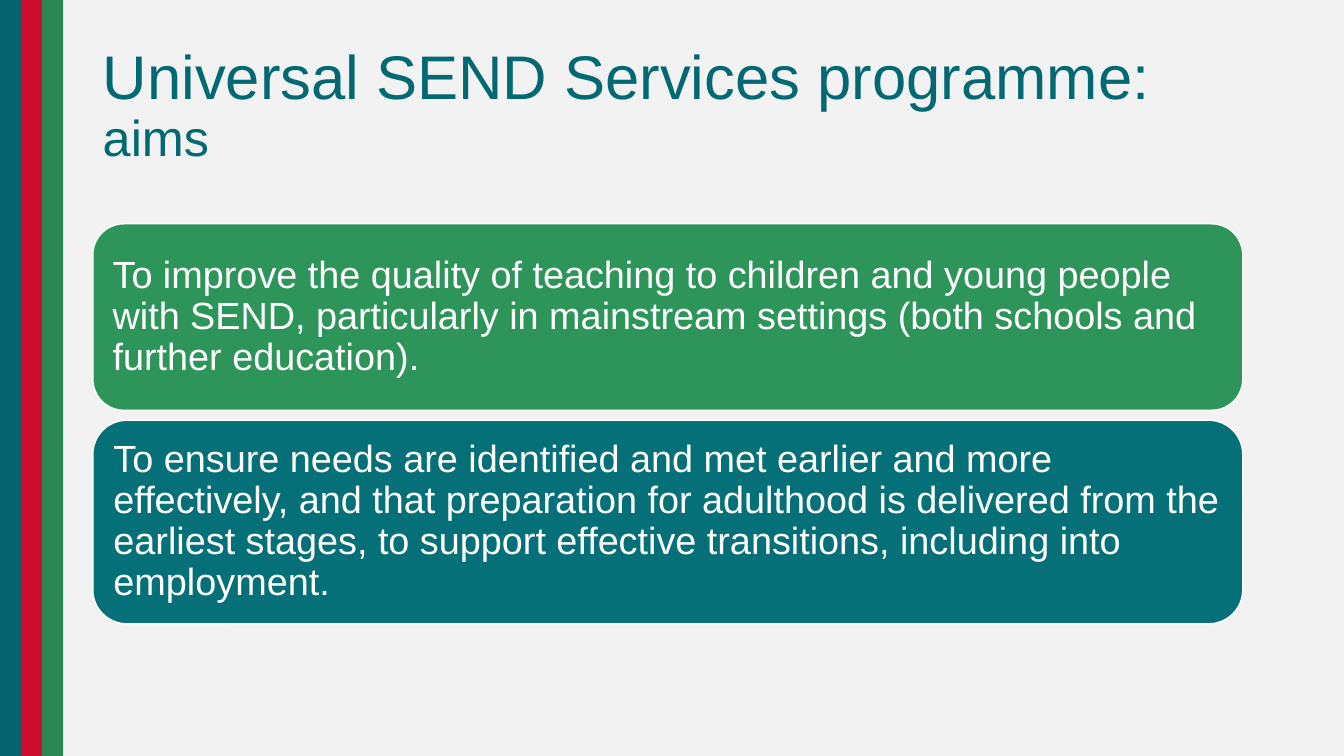
from typing import NamedTuple

from pptx import Presentation
from pptx.dml.color import RGBColor
from pptx.enum.shapes import MSO_SHAPE
from pptx.enum.text import MSO_ANCHOR, PP_ALIGN
from pptx.shapes.autoshape import Shape
from pptx.slide import Slide
from pptx.text.text import TextFrame
from pptx.util import Cm, Pt

SLIDE_WIDTH, SLIDE_HEIGHT = 33.87, 19.05
STRIPE_WIDTH = 0.53
STRIPE_COLORS = ("03646F", "CC0D2D", "2A8852")
CONTENT_LEFT = 2.34


class Aim(NamedTuple):
    top: float
    height: float
    color: str
    text: str


AIMS = (
    Aim(5.64, 4.7, "2E955A",
        "To improve the quality of teaching to children and young people with SEND, "
        "particularly in mainstream settings (both schools and further education)."),
    Aim(10.59, 5.13, "057078",
        "To ensure needs are identified and met earlier and more effectively, and that "
        "preparation for adulthood is delivered from the earliest stages, to support "
        "effective transitions, including into employment."),
)


def rgb(value: str) -> RGBColor:
    return RGBColor.from_string(value)


def add_text(frame: TextFrame, text: str, *, size: float, color: str) -> None:
    """Append a run to the first paragraph of the frame."""
    frame.word_wrap = True
    frame.vertical_anchor = MSO_ANCHOR.MIDDLE
    paragraph = frame.paragraphs[0]
    paragraph.alignment = PP_ALIGN.LEFT
    paragraph.line_spacing = 0.9
    run = paragraph.add_run()
    run.text = text
    run.font.name = "Arial"
    run.font.size = Pt(size)
    run.font.color.rgb = rgb(color)


def add_block(slide: Slide, preset: MSO_SHAPE, left: float, top: float,
              width: float, height: float, color: str) -> Shape:
    block = slide.shapes.add_shape(preset, Cm(left), Cm(top), Cm(width), Cm(height))
    block.shadow.inherit = False
    block.fill.solid()
    block.fill.fore_color.rgb = rgb(color)
    block.line.fill.background()
    return block


def add_aim(slide: Slide, aim: Aim) -> None:
    panel = add_block(slide, MSO_SHAPE.ROUNDED_RECTANGLE, CONTENT_LEFT, aim.top,
                      28.98, aim.height, aim.color)
    panel.line.color.rgb = rgb("FFFFFF")
    panel.line.width = Pt(1)
    frame = panel.text_frame
    frame.margin_left = frame.margin_right = Cm(0.27)
    frame.margin_top = frame.margin_bottom = Cm(0.27)
    add_text(frame, aim.text, size=27, color="FFFFFF")


def add_title(slide: Slide) -> None:
    title = slide.shapes.add_textbox(Cm(CONTENT_LEFT), Cm(0.86), Cm(29.21), Cm(3.68))
    add_text(title.text_frame, "Universal SEND Services programme: ", size=44, color="026973")
    add_text(title.text_frame, "aims", size=36, color="026973")


def main() -> None:
    presentation = Presentation()
    presentation.slide_width = Cm(SLIDE_WIDTH)
    presentation.slide_height = Cm(SLIDE_HEIGHT)
    slide = presentation.slides.add_slide(presentation.slide_layouts[6])
    slide.background.fill.solid()
    slide.background.fill.fore_color.rgb = rgb("F2F2F2")

    for index, color in enumerate(STRIPE_COLORS):
        add_block(slide, MSO_SHAPE.RECTANGLE, index * STRIPE_WIDTH, 0,
                  STRIPE_WIDTH, SLIDE_HEIGHT, color)
    add_title(slide)
    for aim in AIMS:
        add_aim(slide, aim)
    presentation.save("out.pptx")


if __name__ == "__main__":
    main()
